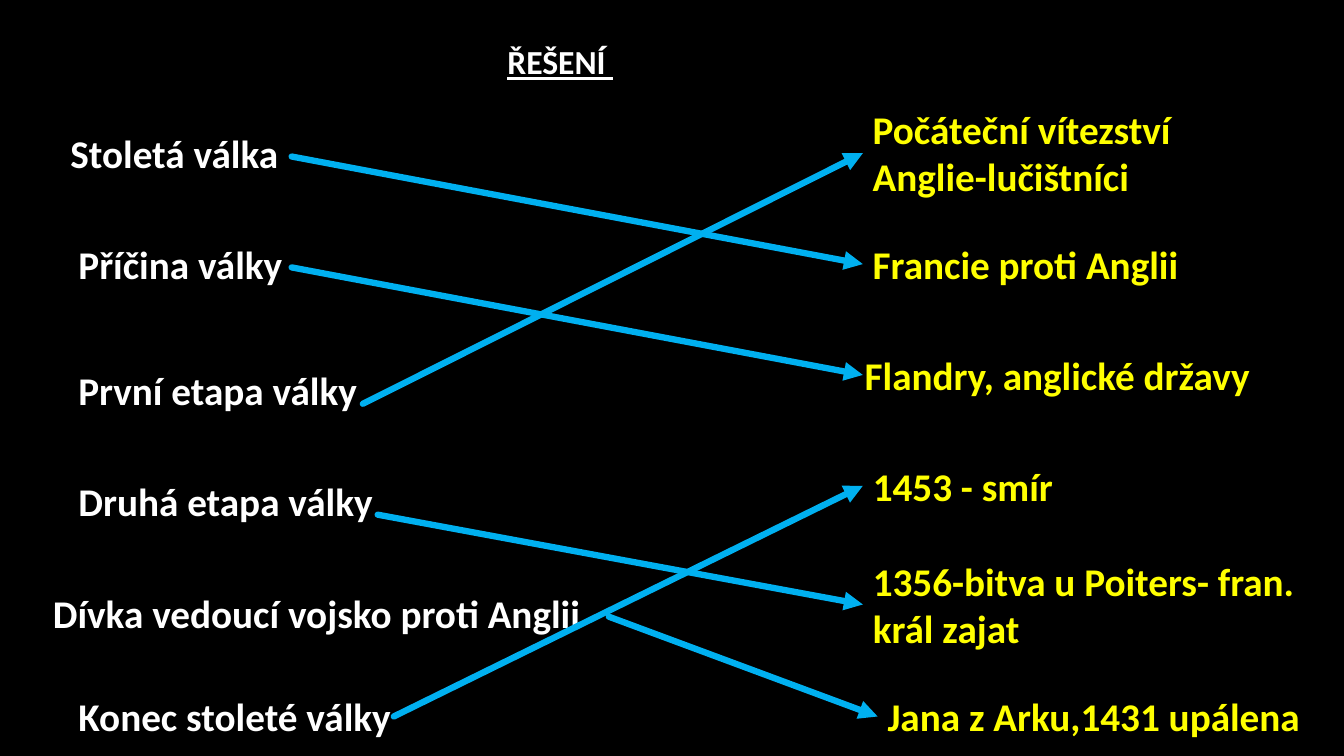
from dataclasses import dataclass
from typing import NamedTuple

from lxml.etree import SubElement
from pptx import Presentation
from pptx.dml.color import RGBColor
from pptx.enum.shapes import MSO_CONNECTOR
from pptx.enum.text import MSO_ANCHOR, MSO_AUTO_SIZE, PP_ALIGN
from pptx.oxml.ns import qn
from pptx.util import Inches, Pt

SLIDE_W, SLIDE_H = 13.33, 7.5
FIRST_ROW = 1.52
ROW_PITCH = 1.1
LINE_HEIGHT, BOX_PADDING = 0.47, 0.1


@dataclass(frozen=True)
class Theme:
    font: str = "Calibri"
    background: RGBColor = RGBColor(0, 0, 0)
    clue: RGBColor = RGBColor(0xFF, 0xFF, 0xFF)
    answer: RGBColor = RGBColor(0xFF, 0xFF, 0)
    arrow: RGBColor = RGBColor(0, 0xB0, 0xF0)
    title_size: Pt = Pt(24)
    label_size: Pt = Pt(28)
    arrow_width: Pt = Pt(4.5)


THEME = Theme()


class Label(NamedTuple):
    """Left and width are shares of the slide width; row is the centre line."""
    wording: str
    left: float
    row: float
    width: float
    lines: int = 1


class Match(NamedTuple):
    """Indexes of a clue and its answer, with the arrow's start and end."""
    clue: int
    answer: int
    start: float
    end: float = 0.642
    drop: float = 0.03


CLUES = [
    Label("Stoletá válka", 0.045, 0, 0.248),
    Label("Příčina války", 0.051, 1, 0.201),
    Label("První etapa války", 0.051, 2.14, 0.254),
    Label("Druhá etapa války", 0.051, 3.14, 0.319),
    Label("Dívka vedoucí vojsko proti Anglii", 0.032, 4.15, 0.415),
    Label("Konec stoleté války", 0.051, 5.08, 0.401),
]
ANSWERS = [
    Label("Počáteční vítezství Anglie-lučištníci", 0.642, 0, 0.307, 2),
    Label("Francie proti Anglii", 0.642, 1, 0.307),
    Label("Flandry, anglické državy", 0.636, 2, 0.325),
    Label("1453 - smír", 0.642, 3, 0.331),
    Label("1356-bitva u Poiters- fran. král zajat", 0.642, 4.07, 0.343, 2),
    Label("Jana z Arku,1431 upálena", 0.653, 5.08, 0.331),
]
MATCHES = [
    Match(0, 1, 0.217),
    Match(1, 2, 0.217),
    Match(2, 0, 0.27, drop=0.12),
    Match(3, 4, 0.281, drop=0.12),
    Match(4, 5, 0.453, end=0.653),
    Match(5, 3, 0.293, drop=0),
]


def across(share):
    return Inches(share * SLIDE_W)


def row_centre(row):
    return Inches(FIRST_ROW + row * ROW_PITCH)


def write(frame, wording, size, color):
    frame.word_wrap = True
    frame.auto_size = MSO_AUTO_SIZE.SHAPE_TO_FIT_TEXT
    frame.vertical_anchor = MSO_ANCHOR.TOP
    paragraph = frame.paragraphs[0]
    paragraph.text = wording
    paragraph.alignment = PP_ALIGN.LEFT
    font = paragraph.font
    font.name, font.size, font.bold = THEME.font, size, True
    font.color.rgb = color
    return font


def add_title(slide, wording):
    title = slide.shapes.title
    title.left, title.top = across(0.37), Inches(0.048 * SLIDE_H)
    title.width, title.height = across(0.118), Inches(0.067 * SLIDE_H)
    write(title.text_frame, wording, THEME.title_size, THEME.clue).underline = True


def add_label(slide, label, color):
    height = Inches(label.lines * LINE_HEIGHT + BOX_PADDING)
    box = slide.shapes.add_textbox(
        across(label.left), row_centre(label.row) - height // 2,
        across(label.width), height)
    write(box.text_frame, label.wording, THEME.label_size, color)


def add_match_arrow(slide, match):
    arrow = slide.shapes.add_connector(
        MSO_CONNECTOR.STRAIGHT,
        across(match.start), row_centre(CLUES[match.clue].row + match.drop),
        across(match.end), row_centre(ANSWERS[match.answer].row))
    arrow.line.color.rgb = THEME.arrow
    arrow.line.width = THEME.arrow_width
    properties = arrow.element.spPr
    outline = properties.find(qn("a:ln"))
    outline.set("cap", "rnd")
    SubElement(outline, qn("a:round"))
    SubElement(outline, qn("a:tailEnd"), type="triangle")
    SubElement(properties, qn("a:effectLst"))


def main():
    presentation = Presentation()
    presentation.slide_width = Inches(SLIDE_W)
    presentation.slide_height = Inches(SLIDE_H)
    slide = presentation.slides.add_slide(presentation.slide_layouts[5])
    slide.background.fill.solid()
    slide.background.fill.fore_color.rgb = THEME.background

    add_title(slide, "ŘEŠENÍ ")
    for labels, color in ((CLUES, THEME.clue), (ANSWERS, THEME.answer)):
        for label in labels:
            add_label(slide, label, color)
    for match in MATCHES:
        add_match_arrow(slide, match)
    presentation.save("out.pptx")


if __name__ == "__main__":
    main()
